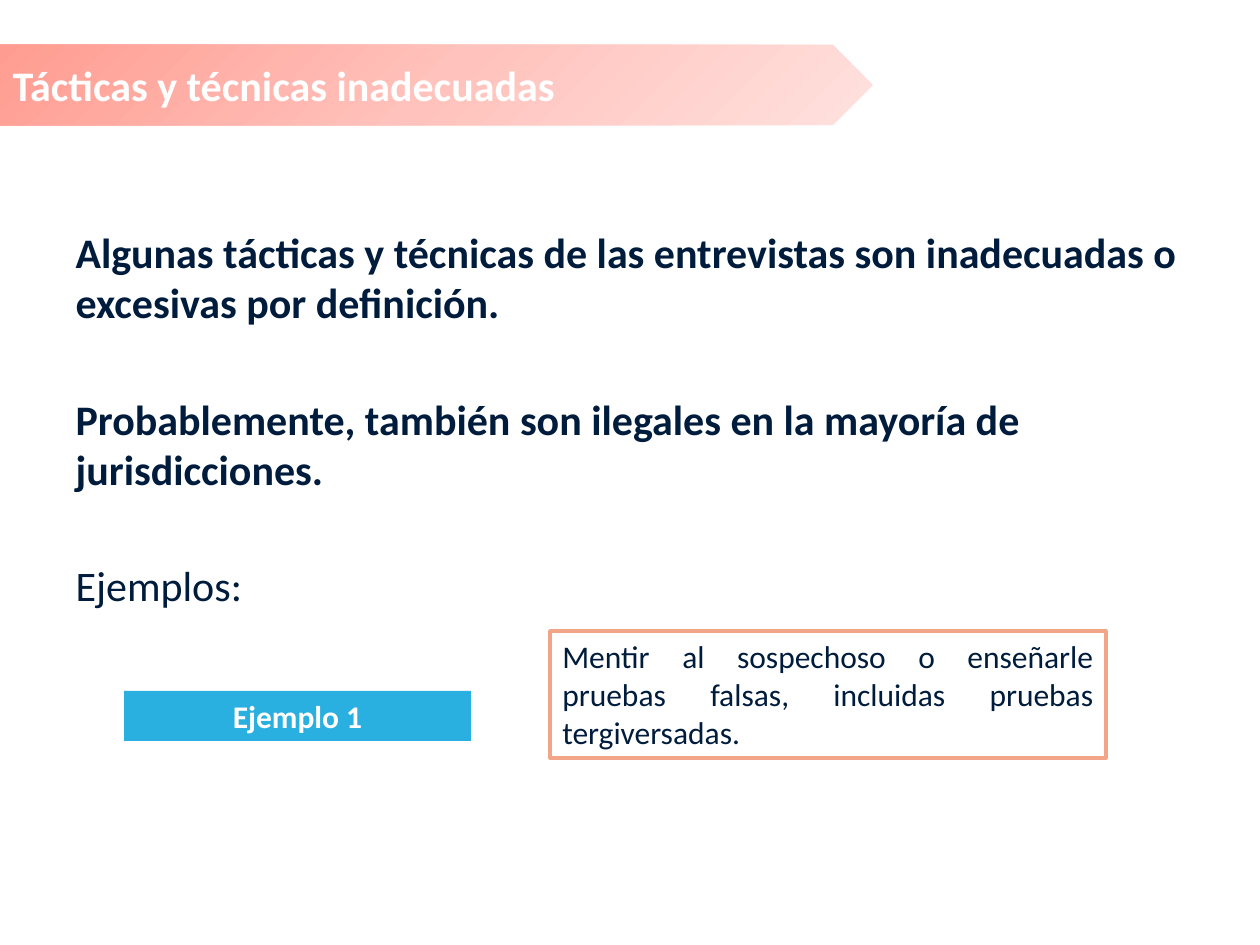
from lxml import etree
from pptx import Presentation
from pptx.dml.color import RGBColor
from pptx.enum.shapes import MSO_SHAPE
from pptx.enum.text import MSO_ANCHOR, MSO_AUTO_SIZE, PP_ALIGN
from pptx.oxml import parse_xml
from pptx.oxml.ns import qn
from pptx.util import Pt

PENTAGON, RECT = MSO_SHAPE.PENTAGON, MSO_SHAPE.RECTANGLE
LEFT, CENTER, JUSTIFY = PP_ALIGN.LEFT, PP_ALIGN.CENTER, PP_ALIGN.JUSTIFY
TOP, MIDDLE = MSO_ANCHOR.TOP, MSO_ANCHOR.MIDDLE
NO_AUTOFIT = MSO_AUTO_SIZE.NONE

NAVY = RGBColor(0x00, 0x1C, 0x3D)
WHITE = RGBColor(0xFF, 0xFF, 0xFF)
BLUE = RGBColor(0x00, 0xA2, 0xDB)
SALMON = RGBColor(0xF3, 0xA6, 0x87)
BANNER_STOPS = [
    (0, RGBColor(0xFF, 0x9C, 0x91)),
    (50, RGBColor(0xFF, 0xC2, 0xBC)),
    (100, RGBColor(0xFF, 0xE1, 0xDE)),
]

TITLE = "Tácticas y técnicas inadecuadas"
BODY = [
    ("Algunas tácticas y técnicas de las entrevistas son inadecuadas o excesivas por definición.", True),
    ("Probablemente, también son ilegales en la mayoría de jurisdicciones.", True),
    ("Ejemplos:", False),
]
EXAMPLE_LABEL = "Ejemplo 1"
EXAMPLE_TEXT = "Mentir al sospechoso o enseñarle pruebas falsas, incluidas pruebas tergiversadas."

PX = 914400 // 126
BANNER_BOX = (0, 45, 873, 80)
BODY_BOX = (63, 220, 1134, 431)
LABEL_BOX = (124, 691, 347, 50)
EXAMPLE_BOX = (550, 631, 556, 127)


def place(s, box):
    s.left, s.top, s.width, s.height = [n * PX for n in box]


def write(p, text, size=24, color=NAVY, bold=False, align=LEFT, before=0):
    p.alignment = align
    p.space_before = Pt(before)
    r = p.add_run()
    r.text = text
    r.font.name = "Calibri"
    r.font.size = Pt(size)
    r.font.bold = bold
    r.font.color.rgb = color


def set_frame(s, anchor):
    tf = s.text_frame
    tf.word_wrap = True
    tf.auto_size = NO_AUTOFIT
    tf.vertical_anchor = anchor
    return tf


def add_box(shapes, kind, box, fill=WHITE, line=None):
    s = shapes.add_shape(kind, *[n * PX for n in box])
    s.shadow.inherit = False
    s.fill.solid()
    s.fill.fore_color.rgb = fill
    if line is None:
        s.line.fill.background()
    else:
        s.line.color.rgb = line
        s.line.width = Pt(2)
    return s


def set_radial_fill(s, stops):
    gs = "".join(
        f'<a:gs pos="{pos * 1000}"><a:srgbClr val="{color}"/></a:gs>' for pos, color in stops
    )
    grad = parse_xml(
        '<a:gradFill xmlns:a="http://schemas.openxmlformats.org/drawingml/2006/main">'
        f'<a:gsLst>{gs}</a:gsLst><a:path path="circle">'
        '<a:fillToRect r="100000" b="100000"/></a:path></a:gradFill>'
    )
    solid = s._element.spPr.find(qn("a:solidFill"))
    solid.getparent().replace(solid, grad)


def set_opacity(s, percent):
    color = s._element.spPr.find(qn("a:solidFill"))[0]
    etree.SubElement(color, qn("a:alpha")).set("val", str(percent * 1000))


def main():
    prs = Presentation()
    prs.slide_width, prs.slide_height = 1260 * PX, 945 * PX
    slide = prs.slides.add_slide(prs.slide_layouts[1])
    shapes = slide.shapes
    title, body = shapes.title, slide.placeholders[1]

    place(body, BODY_BOX)
    tf = set_frame(body, TOP)
    for i, (text, bold) in enumerate(BODY):
        p = tf.paragraphs[0] if i == 0 else tf.add_paragraph()
        write(p, text, bold=bold, before=37.7 if i else 0)
        pPr = p._p.get_or_add_pPr()
        pPr.set("marL", "0")
        pPr.set("indent", "0")
        etree.SubElement(pPr, qn("a:buNone"))

    banner = add_box(shapes, PENTAGON, BANNER_BOX)
    set_radial_fill(banner, BANNER_STOPS)
    place(title, BANNER_BOX)
    write(set_frame(title, MIDDLE).paragraphs[0], TITLE, color=WHITE, bold=True)
    banner._element.addnext(title._element)

    label = add_box(shapes, RECT, LABEL_BOX, fill=BLUE)
    set_opacity(label, 84)
    write(set_frame(label, TOP).paragraphs[0], EXAMPLE_LABEL, size=18, color=WHITE, bold=True, align=CENTER)

    example = add_box(shapes, RECT, EXAMPLE_BOX, line=SALMON)
    write(set_frame(example, TOP).paragraphs[0], EXAMPLE_TEXT, size=18, align=JUSTIFY)

    prs.save("out.pptx")


if __name__ == "__main__":
    main()
